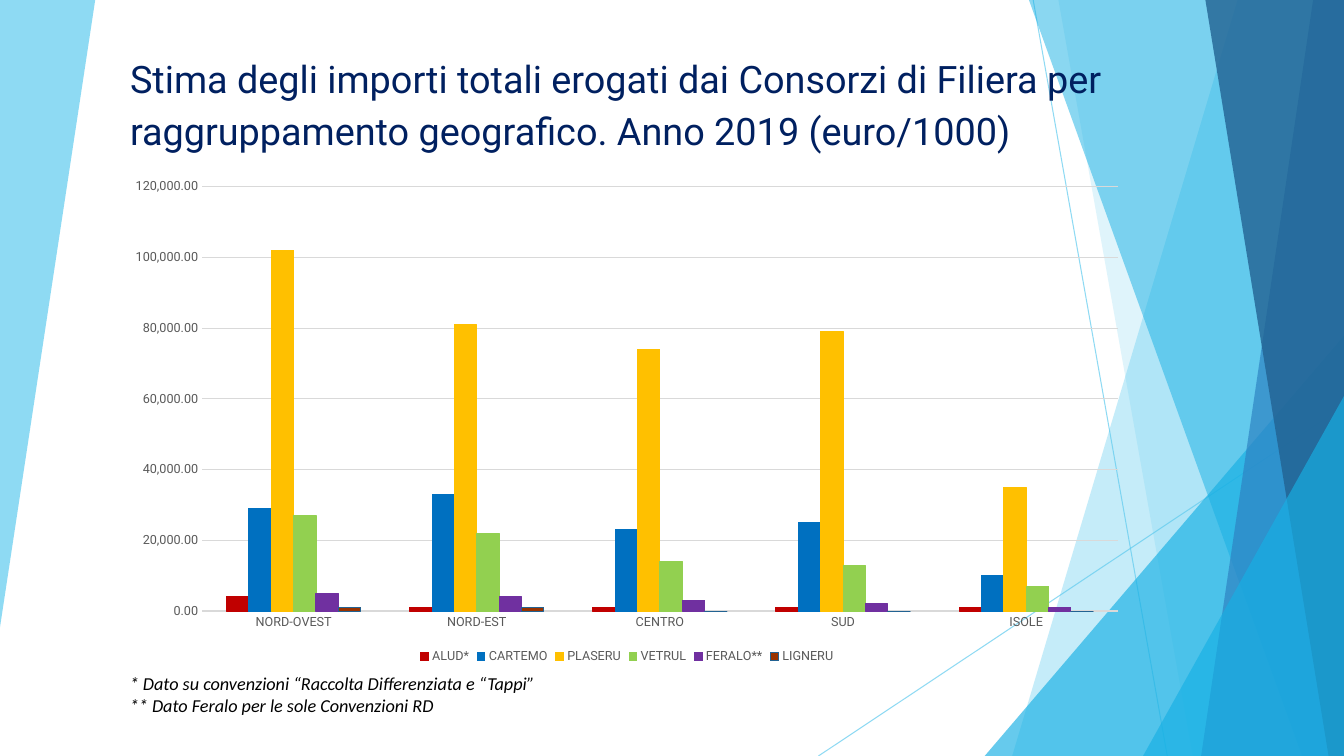
from lxml.etree import SubElement
from pptx import Presentation
from pptx.chart.data import CategoryChartData
from pptx.dml.color import RGBColor
from pptx.enum.chart import XL_CHART_TYPE, XL_LEGEND_POSITION, XL_TICK_MARK
from pptx.enum.shapes import MSO_CONNECTOR, MSO_SHAPE
from pptx.enum.text import MSO_ANCHOR, MSO_AUTO_SIZE, PP_ALIGN
from pptx.oxml import parse_xml
from pptx.oxml.ns import nsdecls, qn
from pptx.util import Pt

TITLE = ("Stima degli importi totali erogati dai Consorzi di Filiera per "
         "raggruppamento geografico. Anno 2019 (euro/1000)")
NOTES = ["* Dato su convenzioni “Raccolta Differenziata e “Tappi” ",
         "** Dato Feralo per le sole Convenzioni RD"]
AREAS = ["NORD-OVEST", "NORD-EST", "CENTRO", "SUD", "ISOLE"]
AMOUNTS = [
    ("ALUD*", "C00000", (4000, 1000, 1000, 1000, 1000)),
    ("CARTEMO", "0070C0", (29000, 33000, 23000, 25000, 10000)),
    ("PLASERU", "FFC000", (102000, 81000, 74000, 79000, 35000)),
    ("VETRUL", "92D050", (27000, 22000, 14000, 13000, 7000)),
    ("FERALO**", "7030A0", (5000, 4000, 3000, 2000, 1000)),
    ("LIGNERU", "993300", (1000, 1000, 0, 0, 0)),
]
OUTLINES = {"LIGNERU": "226292"}

WIDTH, HEIGHT = 960, 540
THEME = {
    "sky": "5FCBEF", "cyan": "17B0E4", "blue": "2E83C3", "deep": "226292",
    "navy": "002060", "ink": "000000", "label": "595959", "grid": "D9D9D9",
    "display": "Roboto", "body": "Calibri",
    "title_size": 27, "note_size": 13, "chart_size": 10, "label_size": 9,
}
LEFT_WEDGE = [(0, 0), (67.7, 0), (0, 447.8)]
RAYS = [((738, 0), (833.8, HEIGHT)), ((WIDTH, 290.2), (584.6, HEIGHT))]
BANDS = [
    ("band", 884.2, 722.9, "sky", 36),
    ("band", 756, 851.8, "sky", 20),
    ("corner", 703.4, 239.8, "cyan", 66),
    ("band", 735.1, 929.5, "cyan", 50),
    ("band", 938.2, 858.2, "blue", 70),
    ("band", 861.1, 949, "deep", 80),
    ("corner", 816.5, 283, "cyan", 66),
]
TITLE_BOX = (85.7, 24.5, 753.8, 108.7)
NOTE_BOX = (85.7, 476.6, 695.5, 38.9)
CHART_BOX = (85.7, 115.6, 724.3, 361.4)
PLOT = {"x": 0.081, "y": 0.049, "w": 0.903, "h": 0.839}


def colour(name):
    return RGBColor.from_string(THEME.get(name, name))


def points(values):
    return [Pt(value) for value in values]


def apply(target, values):
    for name, value in values.items():
        setattr(target, name, value)


def style_font(font, face, size, tint, italic=False):
    apply(font, {"name": THEME[face], "size": Pt(THEME[size]),
                 "italic": italic, "bold": False})
    font.color.rgb = colour(tint)


def style_line(line, tint, width):
    line.color.rgb = colour(tint)
    line.width = Pt(width)


def set_opacity(fill_owner, percent):
    for tint in fill_owner.iter(qn("a:srgbClr")):
        SubElement(tint, qn("a:alpha")).set("val", str(percent * 1000))


def paint(shape, tint, percent):
    shape.shadow.inherit = False
    shape.fill.solid()
    shape.fill.fore_color.rgb = colour(tint)
    shape.line.fill.background()
    set_opacity(shape._element.spPr, percent)


def add_outline(page, corners, tint, percent):
    builder = page.shapes.build_freeform(*corners[0], scale=Pt(1))
    builder.add_line_segments(corners[1:], close=True)
    paint(builder.convert_to_shape(), tint, percent)


def add_backdrop(page):
    add_outline(page, LEFT_WEDGE, "sky", 70)
    for start, end in RAYS:
        ray = page.shapes.add_connector(MSO_CONNECTOR.STRAIGHT, *points(start + end))
        style_line(ray.line, "sky", 0.75)
        set_opacity(ray._element.spPr, 70)
        SubElement(ray._element.spPr, qn("a:effectLst"))
    for kind, first, second, tint, percent in BANDS:
        if kind == "band":
            corners = [(first, 0), (WIDTH, 0), (WIDTH, HEIGHT), (second, HEIGHT)]
            add_outline(page, corners, tint, percent)
        else:
            frame = points((first, second, WIDTH - first, HEIGHT - second))
            corner = page.shapes.add_shape(MSO_SHAPE.ISOSCELES_TRIANGLE, *frame)
            corner.adjustments[0] = 1
            paint(corner, tint, percent)


def add_title(page):
    title = page.shapes.title
    apply(title, dict(zip(("left", "top", "width", "height"), points(TITLE_BOX))))
    apply(title.text_frame, {"text": TITLE, "word_wrap": True,
                             "auto_size": MSO_AUTO_SIZE.NONE,
                             "vertical_anchor": MSO_ANCHOR.BOTTOM,
                             "margin_bottom": Pt(24)})
    para = title.text_frame.paragraphs[0]
    apply(para, {"alignment": PP_ALIGN.LEFT, "line_spacing": 1.15})
    style_font(para.runs[0].font, "display", "title_size", "navy")
    page.shapes._spTree.append(title._element)


def add_notes(page):
    box = page.shapes.add_textbox(*points(NOTE_BOX))
    apply(box.text_frame, {"text": "\n".join(NOTES), "word_wrap": True})
    for para in box.text_frame.paragraphs:
        para.alignment = PP_ALIGN.JUSTIFY
        style_font(para.runs[0].font, "body", "note_size", "ink", True)


def place_plot(chart):
    area = chart._chartSpace.chart.plotArea
    for layout in area.findall(qn("c:layout")):
        area.remove(layout)
    rules = {"layoutTarget": "inner", "xMode": "edge", "yMode": "edge", **PLOT}
    body = "".join(f'<c:{name} val="{value}"/>' for name, value in rules.items())
    area.insert(0, parse_xml(
        f'<c:layout {nsdecls("c")}><c:manualLayout>{body}</c:manualLayout></c:layout>'))


def add_amounts(page):
    data = CategoryChartData(number_format="#,##0.00")
    data.categories = AREAS
    for name, tint, values in AMOUNTS:
        data.add_series(name, values)
    chart = page.shapes.add_chart(
        XL_CHART_TYPE.COLUMN_CLUSTERED, *points(CHART_BOX), data).chart
    apply(chart, {"has_title": False, "has_legend": True})
    style_font(chart.font, "display", "chart_size", "ink")
    apply(chart.legend, {"position": XL_LEGEND_POSITION.BOTTOM,
                         "include_in_layout": False})
    style_font(chart.legend.font, "display", "label_size", "label")
    apply(chart.plots[0], {"gap_width": 219, "overlap": 0, "vary_by_categories": False})
    for series, (name, tint, values) in zip(chart.plots[0].series, AMOUNTS):
        series.invert_if_negative = False
        series.format.fill.solid()
        series.format.fill.fore_color.rgb = colour(tint)
        style_line(series.format.line, OUTLINES.get(name, tint), 0.75)
    for axis in (chart.category_axis, chart.value_axis):
        apply(axis, {"major_tick_mark": XL_TICK_MARK.NONE,
                     "minor_tick_mark": XL_TICK_MARK.NONE})
        style_font(axis.tick_labels.font, "display", "label_size", "label")
    style_line(chart.category_axis.format.line, "grid", 1)
    apply(chart.value_axis, {"minimum_scale": 0, "maximum_scale": 120000,
                             "major_unit": 20000, "has_major_gridlines": True})
    chart.value_axis.format.line.fill.background()
    style_line(chart.value_axis.major_gridlines.format.line, "grid", 0.75)
    apply(chart.value_axis.tick_labels, {"number_format": "#,##0.00",
                                         "number_format_is_linked": False})
    place_plot(chart)


def main():
    deck = Presentation()
    apply(deck, {"slide_width": Pt(WIDTH), "slide_height": Pt(HEIGHT)})
    page = deck.slides.add_slide(deck.slide_layouts[5])
    add_backdrop(page)
    add_title(page)
    add_notes(page)
    add_amounts(page)
    deck.save("out.pptx")


if __name__ == "__main__":
    main()
